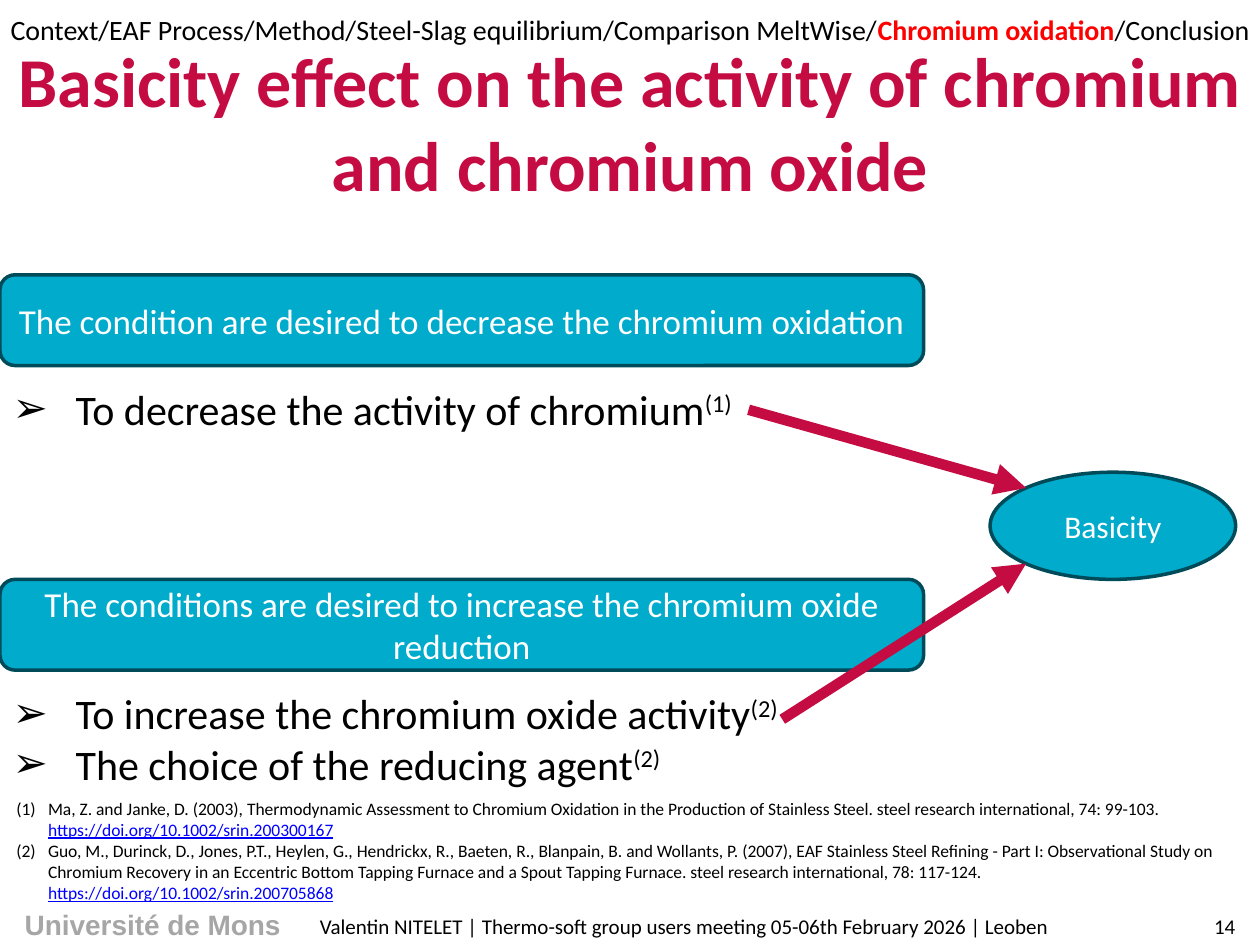
import math
from dataclasses import dataclass

from lxml import etree
from pptx import Presentation
from pptx.dml.color import RGBColor
from pptx.enum import shapes, text
from pptx.oxml.ns import qn
from pptx.util import Cm, Pt


@dataclass(frozen=True)
class Theme:
    font: str = "Calibri"
    brand_font: str = "Arial"
    black: str = "000000"
    white: str = "FFFFFF"
    grey: str = "A6A6A6"
    red: str = "FF0000"
    crimson: str = "C40C42"
    link: str = "0000FF"
    fill: str = "00ABCC"
    outline: str = "004B59"
    title: int = 40
    bullet: int = 24
    banner: int = 20
    label: int = 18
    trail: int = 16
    footer: int = 12
    reference: int = 10


THEME = Theme()
LEFT, CENTER = text.PP_ALIGN.LEFT, text.PP_ALIGN.CENTER
TOP, MIDDLE = text.MSO_ANCHOR.TOP, text.MSO_ANCHOR.MIDDLE
ACTIVE = {"color": THEME.red, "bold": True}
LINK = {"color": THEME.link, "underline": True}
RAISED = {"raised": True}

# A paragraph is a list of runs; a run is (words, style changes).
TITLE = "Basicity effect on the activity of chromium and chromium oxide"
TRAIL = [
    ("Context/EAF Process/Method/Steel-Slag equilibrium/Comparison MeltWise/", {}),
    ("Chromium oxidation", ACTIVE),
    ("/Conclusion", {}),
]
SECTIONS = [
    {
        "banner": "The condition are desired to decrease the chromium oxidation",
        "points": [("To decrease the activity of chromium", "(1)")],
        "top": 5.54,
        "arrow_start": (15.09, 8.26),
        "arrow_side": -1,
    },
    {
        "banner": "The conditions are desired to increase the chromium oxide reduction",
        "points": [
            ("To increase the chromium oxide activity", "(2)"),
            ("The choice of the reducing agent", "(2)"),
        ],
        "top": 11.68,
        "arrow_start": (15.77, 14.5),
        "arrow_side": 1,
    },
]
REFERENCES = [
    (
        "Ma, Z. and Janke, D. (2003), Thermodynamic Assessment to Chromium Oxidation "
        "in the Production of Stainless Steel. steel research international, 74: 99-103. ",
        "https://doi.org/10.1002/srin.200300167",
    ),
    (
        "Guo, M., Durinck, D., Jones, P.T., Heylen, G., Hendrickx, R., Baeten, R., "
        "Blanpain, B. and Wollants, P. (2007), EAF Stainless Steel Refining - Part I: "
        "Observational Study on Chromium Recovery in an Eccentric Bottom Tapping Furnace "
        "and a Spout Tapping Furnace. steel research international, 78: 117-124. ",
        "https://doi.org/10.1002/srin.200705868",
    ),
]
FOOTER = "Valentin NITELET | Thermo-soft group users meeting 05-06th February 2026 | Leoben"

SLIDE_WIDTH, SLIDE_HEIGHT = 25.4, 19.05
BANNER_WIDTH, BANNER_HEIGHT = 18.62, 1.83
LIST_OFFSET, LIST_HEIGHT = 2.06, 2.54
FOOTER_TOP, FOOTER_HEIGHT = 18.29, 0.76
ELLIPSE = (19.96, 9.52, 4.95, 2.16)


def color(value):
    return RGBColor.from_string(value)


def place(shape, box):
    shape.left, shape.top, shape.width, shape.height = (Cm(length) for length in box)


def set_marker(paragraph, tag, hanging, **attributes):
    """Give a paragraph a hanging bullet or number."""
    properties = paragraph._p.get_or_add_pPr()
    properties.set("marL", str(Cm(hanging)))
    properties.set("indent", str(-Cm(hanging)))
    etree.SubElement(properties, qn(tag), attributes)


def write(shape, paragraphs, size, ink=THEME.black, font=THEME.font, bold=False,
          align=LEFT, anchor=MIDDLE, wrap=True, marker=None):
    frame = shape.text_frame
    frame.word_wrap = wrap
    frame.auto_size = text.MSO_AUTO_SIZE.NONE
    frame.vertical_anchor = anchor
    for index, runs in enumerate(paragraphs):
        paragraph = frame.paragraphs[0] if index == 0 else frame.add_paragraph()
        paragraph.alignment = align
        paragraph.space_before = Pt(0)
        if marker:
            set_marker(paragraph, **marker)
        for words, style in runs:
            run = paragraph.add_run()
            run.text = words
            run.font.name = font
            run.font.size = Pt(size)
            run.font.bold = style.get("bold", bold)
            run.font.underline = style.get("underline", False)
            run.font.color.rgb = color(style.get("color", ink))
            if style.get("raised"):
                run._r.get_or_add_rPr().set("baseline", "30000")


def add_text(slide, box, paragraphs, size, **options):
    shape = slide.shapes.add_textbox(*(Cm(length) for length in box))
    write(shape, paragraphs, size, **options)


def add_label(slide, kind, box, words, size):
    """Add a filled, outlined shape with centred white text."""
    shape = slide.shapes.add_shape(kind, *(Cm(length) for length in box))
    shape.shadow.inherit = False
    shape.fill.solid()
    shape.fill.fore_color.rgb = color(THEME.fill)
    shape.line.color.rgb = color(THEME.outline)
    shape.line.width = Pt(2)
    write(shape, [[(words, {})]], size, ink=THEME.white, align=CENTER)


def add_arrow(slide, start, end):
    arrow = slide.shapes.add_connector(
        shapes.MSO_CONNECTOR.STRAIGHT, *(Cm(length) for length in (*start, *end)))
    arrow.line.color.rgb = color(THEME.crimson)
    arrow.line.width = Pt(6)
    etree.SubElement(arrow.line._get_or_add_ln(), qn("a:tailEnd"), {"type": "triangle"})
    etree.SubElement(arrow._element.spPr, qn("a:effectLst"))


def ellipse_corner(side):
    """Point on the left of the ellipse at 45 degrees, above (-1) or below (1)."""
    left, top, width, height = ELLIPSE
    reach = math.sqrt(0.5) / 2
    return left + width * (0.5 - reach), top + height * (0.5 + side * reach)


def main():
    presentation = Presentation()
    presentation.slide_width, presentation.slide_height = Cm(SLIDE_WIDTH), Cm(SLIDE_HEIGHT)
    slide = presentation.slides.add_slide(presentation.slide_layouts.get_by_name("Two Content"))
    title, *lists = [slide.placeholders[index] for index in (0, 1, 2)]

    place(title, (0, 0.03, SLIDE_WIDTH, 4.85))
    write(title, [[(TITLE, {})]], THEME.title, ink=THEME.crimson, bold=True, align=CENTER)
    add_text(slide, (0, 0.13, SLIDE_WIDTH, 1.02), [TRAIL], THEME.trail,
             align=CENTER, anchor=TOP, wrap=False)

    for section, body in zip(SECTIONS, lists):
        top = section["top"]
        add_label(slide, shapes.MSO_SHAPE.ROUNDED_RECTANGLE,
                  (0, top, BANNER_WIDTH, BANNER_HEIGHT), section["banner"], THEME.banner)
        place(body, (0, top + LIST_OFFSET, BANNER_WIDTH, LIST_HEIGHT))
        points = [[(words, {}), (note, RAISED)] for words, note in section["points"]]
        write(body, points, THEME.bullet, anchor=TOP,
              marker={"tag": "a:buChar", "hanging": 1.27, "char": "➢"})

    add_label(slide, shapes.MSO_SHAPE.OVAL, ELLIPSE, "Basicity", THEME.label)
    for section in SECTIONS:
        add_arrow(slide, section["arrow_start"], ellipse_corner(section["arrow_side"]))

    references = [[(citation, {}), (link, LINK)] for citation, link in REFERENCES]
    add_text(slide, (0.08, 16, 24.84, 2.29), references, THEME.reference,
             marker={"tag": "a:buAutoNum", "hanging": 0.64, "type": "arabicParenBoth"})

    add_text(slide, (-0.02, 18.18, 6.2, 0.94), [[("Université de Mons", {})]], THEME.trail,
             ink=THEME.grey, font=THEME.brand_font, bold=True, align=CENTER, anchor=TOP)
    add_text(slide, (6.2, FOOTER_TOP, 17.78, FOOTER_HEIGHT), [[(FOOTER, {})]], THEME.footer)
    add_text(slide, (23.98, FOOTER_TOP, 1.42, FOOTER_HEIGHT), [[("14", {})]], THEME.footer,
             align=CENTER)
    presentation.save("out.pptx")


if __name__ == "__main__":
    main()
